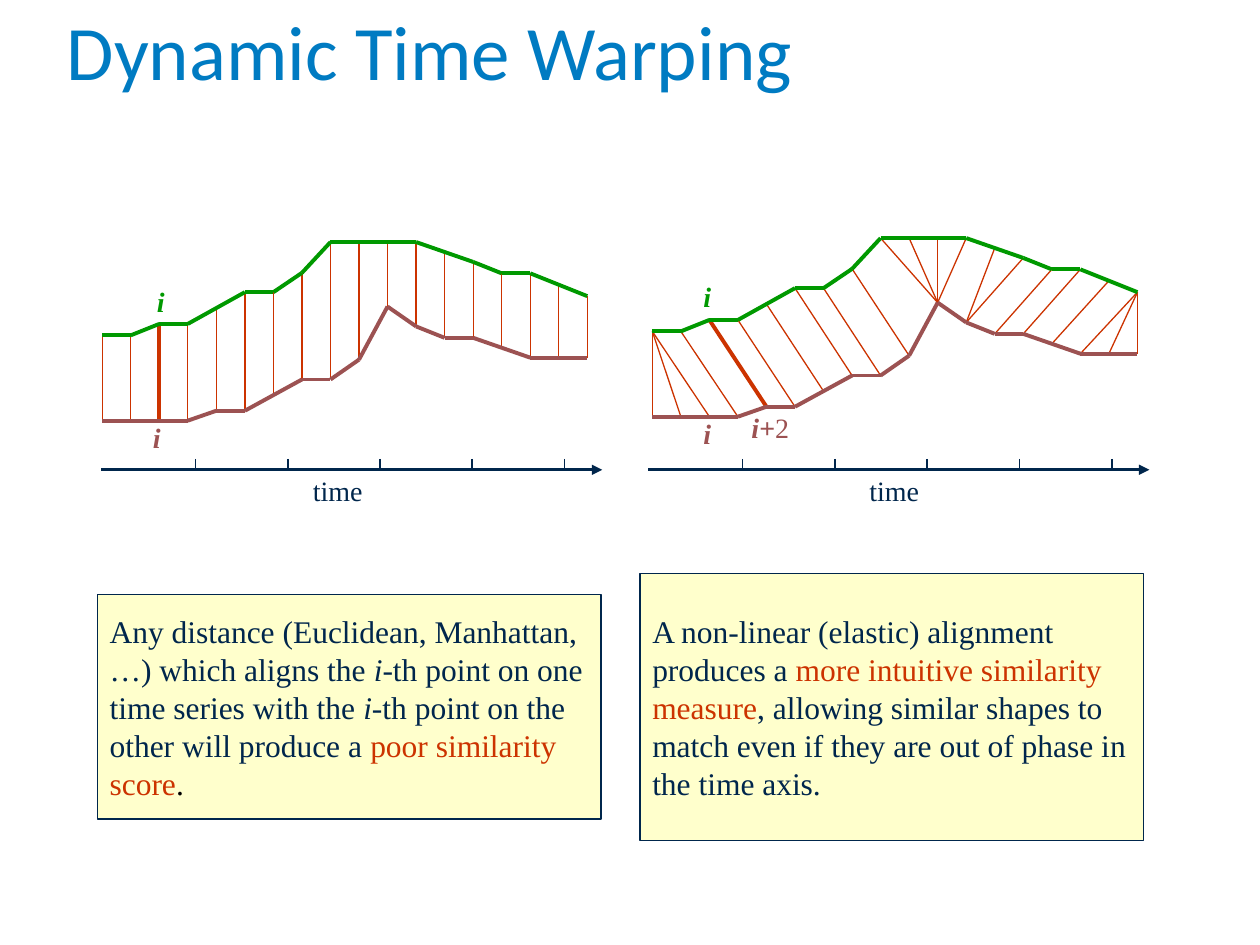
from lxml.etree import SubElement
from pptx import Presentation
from pptx.dml.color import RGBColor
from pptx.enum.shapes import MSO_CONNECTOR as CONNECTOR, MSO_SHAPE as SHAPE
from pptx.enum.text import MSO_ANCHOR as ANCHOR, MSO_AUTO_SIZE as AUTO_SIZE, PP_ALIGN as ALIGN
from pptx.oxml.ns import qn
from pptx.util import Cm, Pt

COLORS = {
    "title": "007BC2", "navy": "00264C", "green": "009900", "brown": "9C5252",
    "red": "CC3300", "cream": "FFFFCC", "white": "FFFFFF", "black": "000000",
}
SERIF = "Times New Roman"
LAST = 17
STEP = 9.78 / LAST

# Heights in cm at the samples where each series bends
UPPER = {0: 6.76, 1: 6.76, 2: 6.53, 3: 6.53, 5: 5.89, 6: 5.89, 7: 5.5, 8: 4.88,
         11: 4.88, 13: 5.28, 14: 5.51, 15: 5.51, 17: 5.97}
LOWER = {0: 8.48, 3: 8.48, 4: 8.28, 5: 8.28, 7: 7.65, 8: 7.65, 9: 7.25, 10: 6.18,
         11: 6.58, 12: 6.81, 13: 6.81, 15: 7.21, 17: 7.21}

# Pairs of matched samples (upper, lower)
LINEAR = [(k, k) for k in range(LAST + 1)]
WARPED = ([(0, 0), (0, 1)] + [(k, k + 2) for k in range(9)]
          + [(k, 10) for k in (9, 10, 11)] + [(12, 11)]
          + [(k, k - 2) for k in range(13, 18)] + [(17, 16), (17, 17)])


def rgb(name):
    return RGBColor.from_string(COLORS[name])


def height_at(series, sample):
    """Interpolate a series between its bends."""
    left = max(k for k in series if k <= sample)
    right = min(k for k in series if k >= sample)
    if left == right:
        return series[left]
    share = (sample - left) / (right - left)
    return series[left] + share * (series[right] - series[left])


def add_line(shapes, start, end, color, width, arrow=False):
    line = shapes.add_connector(CONNECTOR.STRAIGHT, *map(Cm, start + end))
    line.line.color.rgb = rgb(color)
    line.line.width = Pt(width)
    if arrow:
        SubElement(line.line._get_or_add_ln(), qn("a:tailEnd"), type="triangle")
    SubElement(line._element.spPr, qn("a:effectLst"))


def add_runs(para, runs, size):
    """Add runs given as (text, colour, style letters b and i)."""
    for text, color, style in runs:
        span = para.add_run()
        span.text = text
        font = span.font
        font.name, font.size = SERIF, Pt(size)
        font.bold, font.italic = "b" in style, "i" in style
        font.color.rgb = rgb(color)


def add_box(page, place, fill, runs, size, align, wrap):
    box = page.shapes.add_shape(SHAPE.RECTANGLE, *map(Cm, place))
    box.shadow.inherit = False
    box.fill.solid()
    box.fill.fore_color.rgb = rgb(fill)
    frame = box.text_frame
    frame.word_wrap = wrap
    frame.vertical_anchor = ANCHOR.MIDDLE
    para = frame.paragraphs[0]
    para.alignment = align
    add_runs(para, runs, size)
    return box


def add_label(page, left, top, width, runs):
    box = add_box(page, (left, top, width, 1.27), "white", runs, 16, ALIGN.CENTER, False)
    box.line.fill.background()


def add_note(page, place, runs):
    box = add_box(page, place, "cream", runs, 18, ALIGN.LEFT, True)
    box.line.color.rgb = rgb("navy")
    box.line.width = Pt(0.75)


def add_time_axis(page, left):
    shapes = page.shapes.add_group_shape().shapes
    add_line(shapes, (left, 9.47), (left + 10.1, 9.47), "navy", 1.5, arrow=True)
    for tick in range(5):
        x = left + 1.9 + tick * 1.86
        add_line(shapes, (x, 9.25), (x, 9.45), "navy", 1)


def add_alignment(page, left, rise, pairs, marked):
    """Draw both series and the lines that join their matched samples."""
    def point(series, sample):
        return left + sample * STEP, height_at(series, sample) - rise

    for pair in pairs:
        add_line(page.shapes, point(UPPER, pair[0]), point(LOWER, pair[1]),
                 "red", 2.25 if pair == marked else 0.75)
    for series, color in ((UPPER, "green"), (LOWER, "brown")):
        shapes = page.shapes.add_group_shape().shapes
        bends = list(series)
        for start, end in zip(bends, bends[1:]):
            add_line(shapes, point(series, start), point(series, end), color, 2.25)


def set_title(page, text):
    title = page.shapes.title
    title.left, title.top, title.width, title.height = map(Cm, (1.09, 0.03, 23.19, 2.03))
    frame = title.text_frame
    frame.auto_size = AUTO_SIZE.NONE
    frame.vertical_anchor = ANCHOR.BOTTOM
    para = frame.paragraphs[0]
    para.alignment = ALIGN.LEFT
    para.line_spacing = Pt(58)
    span = para.add_run()
    span.text = text
    span.font.name, span.font.size = "Calibri", Pt(44)
    span.font.color.rgb = rgb("title")


def main():
    deck = Presentation()
    deck.slide_width, deck.slide_height = Cm(25.4), Cm(19.05)
    page = deck.slides.add_slide(deck.slide_layouts[5])
    set_title(page, "Dynamic Time Warping")

    for left, top, color in ((3.05, 5.44, "green"), (2.97, 8.18, "brown"),
                             (14.07, 5.33, "green"), (14.07, 8.1, "brown")):
        add_label(page, left, top, 0.38, [("i", color, "bi")])
    add_label(page, 15.16, 7.98, 0.74, [("i+", "brown", "bi"), ("2", "brown", "")])
    for left in (6.43, 17.65):
        add_label(page, left, 9.25, 0.76, [("time", "navy", "")])

    add_note(page, (1.96, 11.99, 10.16, 4.52), [
        ("Any distance (Euclidean, Manhattan, …) which aligns the ", "navy", ""),
        ("i", "navy", "i"),
        ("-th point on one time series with the ", "navy", ""),
        ("i", "navy", "i"),
        ("-th point on the other will produce a ", "navy", ""),
        ("poor similarity score", "red", ""),
        (".", "black", "")])
    add_note(page, (12.9, 11.56, 10.16, 5.38), [
        ("A non-linear (elastic) alignment produces a ", "navy", ""),
        ("more intuitive similarity measure", "red", ""),
        (", allowing similar shapes to match even if they are out of phase "
         "in the time axis.", "navy", "")])

    for left in (2.04, 13.07):
        add_time_axis(page, left)
    add_alignment(page, 2.06, 0, LINEAR, (2, 2))
    add_alignment(page, 13.15, 0.08, WARPED, (2, 4))
    deck.save("out.pptx")


if __name__ == "__main__":
    main()
